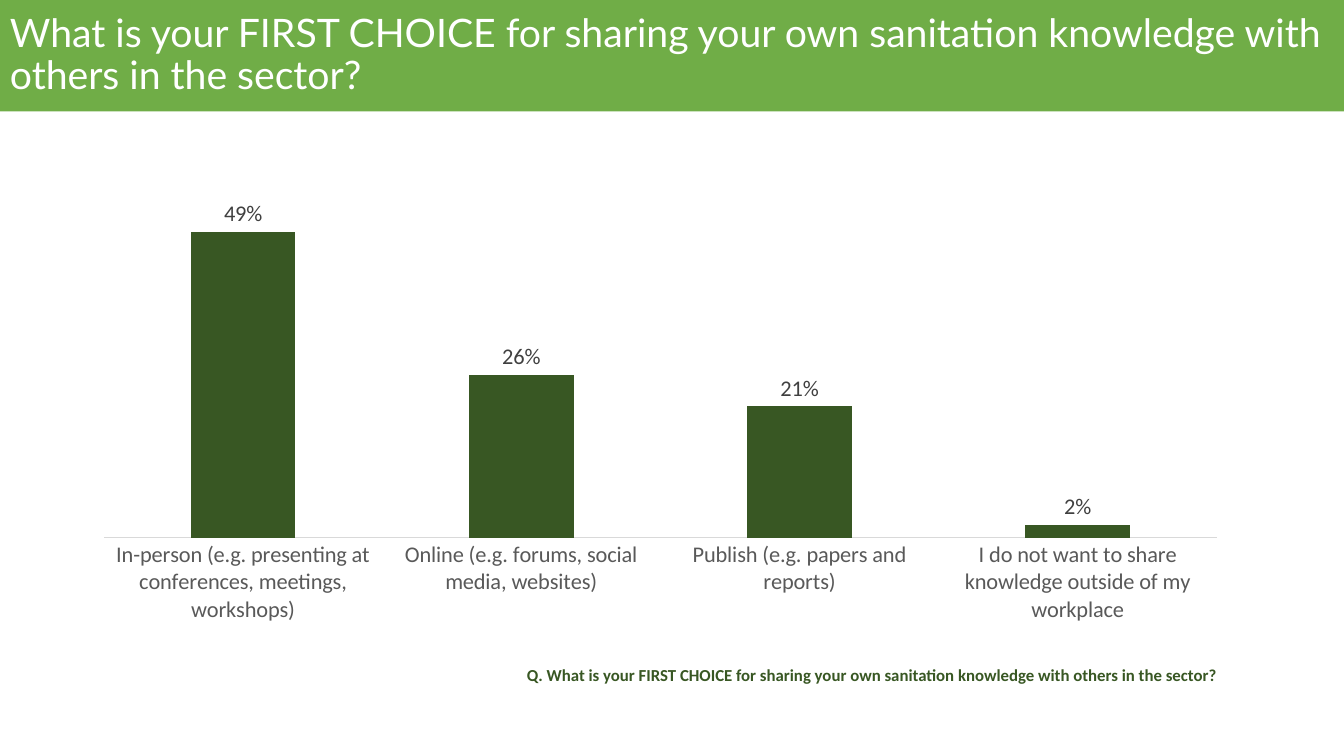
from dataclasses import dataclass

from pptx import Presentation
from pptx.chart.data import CategoryChartData
from pptx.dml.color import RGBColor
from pptx.enum.chart import XL_CHART_TYPE, XL_LABEL_POSITION, XL_TICK_MARK
from pptx.enum.shapes import MSO_SHAPE
from pptx.enum.text import MSO_ANCHOR, PP_ALIGN
from pptx.util import Emu, Pt

RECTANGLE = MSO_SHAPE.RECTANGLE
COLUMNS = XL_CHART_TYPE.COLUMN_CLUSTERED
OUTSIDE_END = XL_LABEL_POSITION.OUTSIDE_END
NO_TICKS = XL_TICK_MARK.NONE
MIDDLE = MSO_ANCHOR.MIDDLE
LEFT, RIGHT = PP_ALIGN.LEFT, PP_ALIGN.RIGHT

EMU_PER_PX = 9525  # 96 px to the inch
QUESTION = ("What is your FIRST CHOICE for sharing your own sanitation "
            "knowledge with others in the sector?")


@dataclass(frozen=True)
class Theme:
    banner: str = "70AD47"
    banner_text: str = "FFFFFF"
    dark_green: str = "385723"
    value_text: str = "404040"
    choice_text: str = "595959"
    baseline: str = "D9D9D9"
    heading_font: str = "Lato"
    body_font: str = "Calibri"
    heading_pt: int = 28
    chart_pt: int = 16
    note_pt: int = 12


@dataclass(frozen=True)
class Box:
    left: int
    top: int
    width: int
    height: int

    def emu(self) -> tuple[Emu, ...]:
        return tuple(Emu(side * EMU_PER_PX)
                     for side in (self.left, self.top, self.width, self.height))


@dataclass(frozen=True)
class Choice:
    label: str
    share: float


THEME = Theme()
PAGE = Box(0, 0, 1280, 720)
BANNER_BOX = Box(0, 0, 1280, 106)
CHART_BOX = Box(77, 146, 1104, 457)
NOTE_BOX = Box(272, 628, 897, 29)

CHOICES = (
    Choice("In-person (e.g. presenting at conferences, meetings, workshops)", 0.49),
    Choice("Online (e.g. forums, social media, websites)", 0.26),
    Choice("Publish (e.g. papers and reports)", 0.21),
    Choice("I do not want to share knowledge outside of my workplace", 0.02),
)


def style_font(font, name: str, size: int, color: str, bold: bool = False) -> None:
    font.name = name
    font.size = Pt(size)
    font.bold = bold
    font.color.rgb = RGBColor.from_string(color)


def write_line(frame, text: str, align: PP_ALIGN, name: str, size: int,
               color: str, bold: bool = False) -> None:
    frame.word_wrap = True
    line = frame.paragraphs[0]
    line.alignment = align
    run = line.add_run()
    run.text = text
    style_font(run.font, name, size, color, bold)


def add_banner(slide) -> None:
    banner = slide.shapes.add_shape(RECTANGLE, *BANNER_BOX.emu())
    banner.shadow.inherit = False
    banner.fill.solid()
    banner.fill.fore_color.rgb = RGBColor.from_string(THEME.banner)
    banner.line.fill.background()
    heading = banner.text_frame
    heading.vertical_anchor = MIDDLE
    write_line(heading, QUESTION, LEFT, THEME.heading_font, THEME.heading_pt,
               THEME.banner_text)
    heading.paragraphs[0].line_spacing = 0.9


def add_choice_chart(slide) -> None:
    data = CategoryChartData(number_format="0%")
    data.categories = [choice.label for choice in CHOICES]
    data.add_series("Series 1", [choice.share for choice in CHOICES])
    chart = slide.shapes.add_chart(COLUMNS, *CHART_BOX.emu(), data).chart
    chart.has_title = False
    chart.has_legend = False
    style_font(chart.font, THEME.body_font, THEME.chart_pt, THEME.choice_text)

    # Axes
    choice_axis = chart.category_axis
    choice_axis.major_tick_mark = NO_TICKS
    choice_axis.minor_tick_mark = NO_TICKS
    choice_axis.format.line.color.rgb = RGBColor.from_string(THEME.baseline)
    choice_axis.format.line.width = Pt(0.75)
    share_axis = chart.value_axis
    share_axis.minimum_scale = 0
    share_axis.maximum_scale = 0.6
    share_axis.has_major_gridlines = False
    share_axis.visible = False

    # Columns and their percentages
    plot = chart.plots[0]
    plot.gap_width = 166
    plot.vary_by_categories = False
    columns = plot.series[0]
    columns.format.fill.solid()
    columns.format.fill.fore_color.rgb = RGBColor.from_string(THEME.dark_green)
    shares = columns.data_labels
    shares.show_value = True
    shares.position = OUTSIDE_END
    shares.number_format = "0%"
    shares.number_format_is_linked = False
    style_font(shares.font, THEME.body_font, THEME.chart_pt, THEME.value_text)


def add_question_note(slide) -> None:
    note = slide.shapes.add_textbox(*NOTE_BOX.emu())
    write_line(note.text_frame, f"Q. {QUESTION}", RIGHT, THEME.body_font,
               THEME.note_pt, THEME.dark_green, bold=True)


def main() -> None:
    deck = Presentation()
    _, _, deck.slide_width, deck.slide_height = PAGE.emu()
    slide = deck.slides.add_slide(deck.slide_layouts[6])
    add_banner(slide)
    add_choice_chart(slide)
    add_question_note(slide)
    deck.save("out.pptx")


if __name__ == "__main__":
    main()
